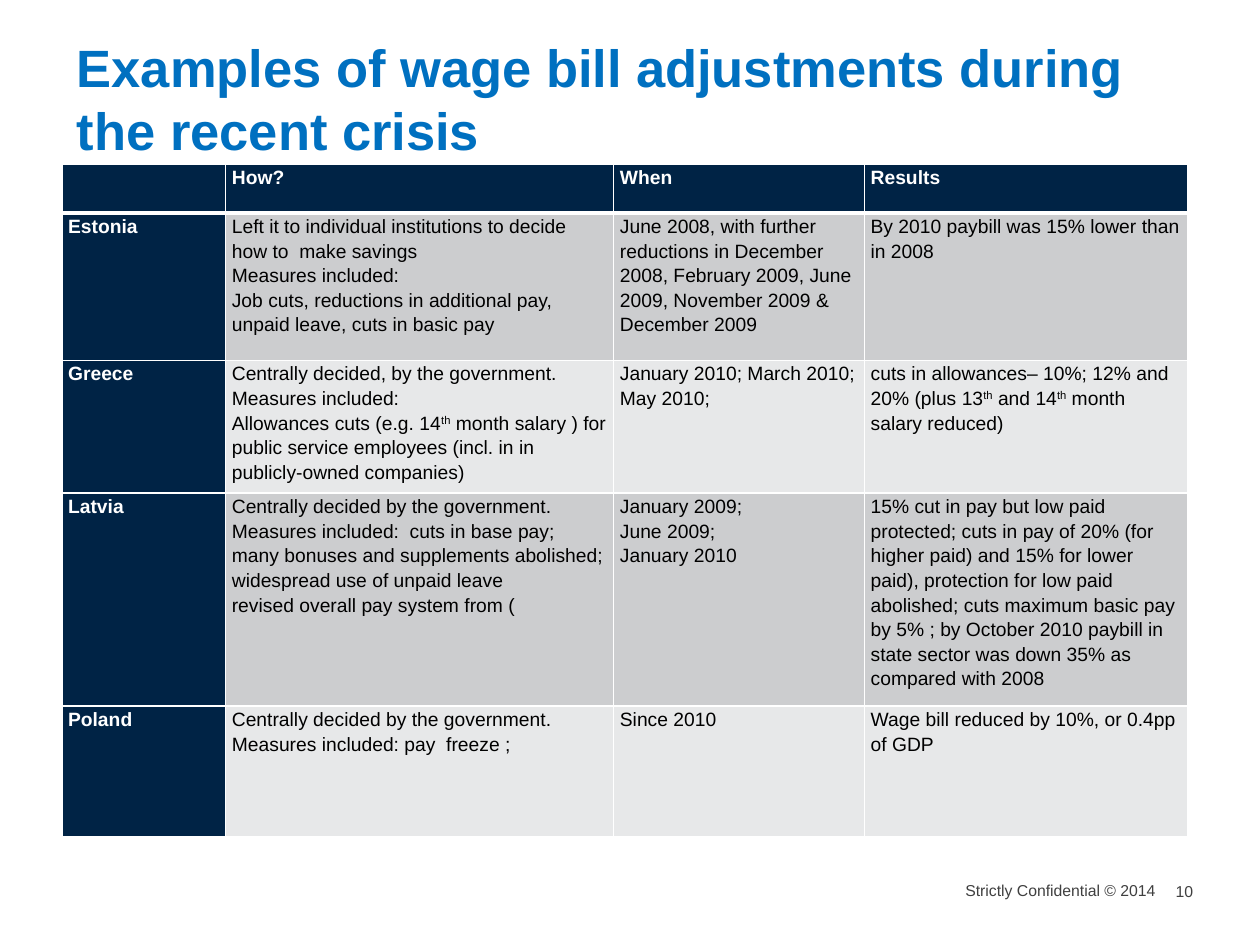
import dataclasses

import lxml.etree
import pptx
import pptx.dml.color
import pptx.enum.text
import pptx.oxml.ns
import pptx.util

Inches = pptx.util.Inches
Pt = pptx.util.Pt
ALIGN = pptx.enum.text.PP_ALIGN
ANCHOR = pptx.enum.text.MSO_ANCHOR


@dataclasses.dataclass(frozen=True)
class Theme:
    font: str = "Arial"
    title: str = "0070C0"
    navy: str = "002345"
    white: str = "FFFFFF"
    black: str = "000000"
    footer: str = "404040"
    bands: tuple = ("CCCDCF", "E7E8E9")
    title_size: int = 30
    table_size: int = 11
    footer_size: int = 9
    border: int = 1
    header_border: int = 3
    line_spacing: float = 1.15


THEME = Theme()
TITLE = "Examples of wage bill adjustments during the recent crisis"
COLUMN_WIDTHS = (1.3, 3.08, 1.99, 2.57)
ROW_HEIGHTS = (0.39, 1.17, 0.98, 1.69, 1.04)
SUPERSCRIPT_MARK = "^"
ROWS = (
    ("", "How?", "When", "Results"),
    (
        "Estonia",
        "Left it to individual institutions to decide how to  make savings\n"
        "Measures included:\n"
        "Job cuts, reductions in additional pay, unpaid leave, cuts in basic pay",
        "June 2008, with further reductions in December 2008, February 2009, "
        "June 2009, November 2009 & December 2009",
        "By 2010 paybill was 15% lower than in 2008",
    ),
    (
        "Greece",
        "Centrally decided, by the government. Measures included:\n"
        "Allowances cuts (e.g. 14^th^ month salary ) for public service "
        "employees (incl. in in publicly-owned companies)",
        "January 2010; March 2010; May 2010;",
        "cuts in allowances– 10%; 12% and 20% (plus 13^th^ and 14^th^ month "
        "salary reduced)",
    ),
    (
        "Latvia",
        "Centrally decided by the government.\n"
        "Measures included:  cuts in base pay; many bonuses and supplements "
        "abolished; widespread use of unpaid leave\n"
        "revised overall pay system from (",
        "January 2009;\nJune 2009;\nJanuary 2010",
        "15% cut in pay but low paid protected; cuts in pay of 20% (for higher "
        "paid) and 15% for lower paid), protection for low paid abolished; cuts "
        "maximum basic pay by 5% ; by October 2010 paybill in state sector was "
        "down 35% as compared with 2008",
    ),
    (
        "Poland",
        "Centrally decided by the government.\nMeasures included: pay  freeze ;",
        "Since 2010",
        "Wage bill reduced by 10%, or 0.4pp of GDP",
    ),
)


def apply(target, formats):
    for name, value in formats.items():
        setattr(target, name, value)


def format_font(font, size, color, bold=False):
    apply(font, {"name": THEME.font, "size": Pt(size), "bold": bold})
    font.color.rgb = pptx.dml.color.RGBColor.from_string(color)


def margins(left, top, right, bottom):
    return {
        "margin_left": Inches(left),
        "margin_top": Inches(top),
        "margin_right": Inches(right),
        "margin_bottom": Inches(bottom),
    }


def add_text(slide, box, text, font, frame_formats, alignment=ALIGN.LEFT):
    shape = slide.shapes.add_textbox(*map(Inches, box))
    apply(shape.text_frame, {"word_wrap": True, **frame_formats})
    paragraph = shape.text_frame.paragraphs[0]
    paragraph.alignment = alignment
    run = paragraph.add_run()
    run.text = text
    format_font(run.font, **font)


def add_title(slide, box):
    font = {"size": THEME.title_size, "color": THEME.title, "bold": True}
    frame = {"vertical_anchor": ANCHOR.BOTTOM, **margins(0, 0, 0, 0.02)}
    add_text(slide, box, TITLE, font, frame)


def add_footer(slide, box):
    left, top, width, height = box
    font = {"size": THEME.footer_size, "color": THEME.footer}
    frame = margins(0, 0.04, 0, 0)
    number_width = 0.31
    notice_box = (left, top, 1.58, height)
    number_box = (left + width - number_width, top + 0.01, number_width, height)
    add_text(slide, notice_box, "Strictly Confidential © 2014", font, frame, ALIGN.RIGHT)
    add_text(slide, number_box, "10", font, frame)


def set_borders(cell, bottom_width):
    properties = cell._tc.get_or_add_tcPr()
    widths = {"L": THEME.border, "R": THEME.border, "T": THEME.border, "B": bottom_width}
    for side, width in widths.items():
        line = lxml.etree.SubElement(
            properties, pptx.oxml.ns.qn(f"a:ln{side}"), w=str(Pt(width))
        )
        fill = lxml.etree.SubElement(line, pptx.oxml.ns.qn("a:solidFill"))
        lxml.etree.SubElement(fill, pptx.oxml.ns.qn("a:srgbClr"), val=THEME.white)


def fill_cell(cell, text, is_header, is_label, band):
    emphasized = is_header or is_label
    font = {
        "size": THEME.table_size,
        "color": THEME.white if emphasized else THEME.black,
        "bold": emphasized,
    }
    set_borders(cell, THEME.header_border if is_header else THEME.border)
    cell.fill.solid()
    cell.fill.fore_color.rgb = pptx.dml.color.RGBColor.from_string(
        THEME.navy if emphasized else band
    )
    apply(cell, {"vertical_anchor": ANCHOR.TOP, **margins(0.05, 0, 0.05, 0)})
    frame = cell.text_frame
    for index, line in enumerate(text.split("\n")):
        paragraph = frame.add_paragraph() if index else frame.paragraphs[0]
        paragraph.line_spacing = THEME.line_spacing
        format_font(paragraph.font, **font)
        if not line:
            continue
        for position, part in enumerate(line.split(SUPERSCRIPT_MARK)):
            run = paragraph.add_run()
            run.text = part
            format_font(run.font, **font)
            if position % 2:
                run._r.get_or_add_rPr().set("baseline", "30000")


def add_adjustment_table(slide, box):
    shape = slide.shapes.add_table(len(ROWS), len(COLUMN_WIDTHS), *map(Inches, box))
    table = shape.table
    for column, width in zip(table.columns, COLUMN_WIDTHS):
        column.width = Inches(width)
    for row, height in zip(table.rows, ROW_HEIGHTS):
        row.height = Inches(height)
    for row_index, texts in enumerate(ROWS):
        band = THEME.bands[(row_index - 1) % 2]
        for column_index, text in enumerate(texts):
            cell = table.cell(row_index, column_index)
            fill_cell(cell, text, row_index == 0, column_index == 0, band)


def main():
    presentation = pptx.Presentation()
    apply(presentation, {"slide_width": Inches(10), "slide_height": Inches(7.5)})
    slide = presentation.slides.add_slide(presentation.slide_layouts[6])
    add_footer(slide, (7.59, 6.95, 2.05, 0.24))
    add_title(slide, (0.61, 0.67, 8.61, 0.63))
    add_adjustment_table(slide, (0.49, 1.3, sum(COLUMN_WIDTHS), sum(ROW_HEIGHTS)))
    presentation.save("out.pptx")


if __name__ == "__main__":
    main()
